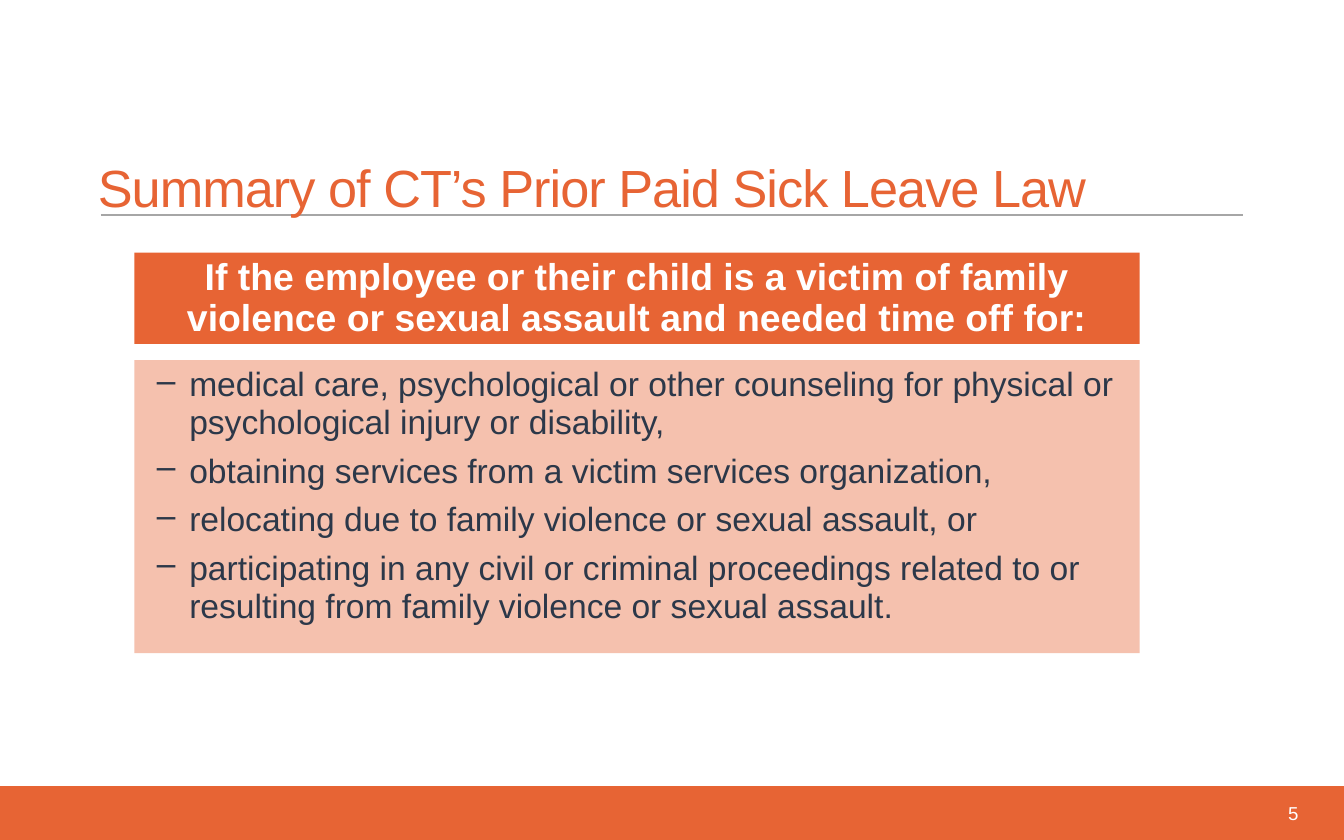
from dataclasses import dataclass

import pptx
import pptx.dml.color
import pptx.enum.shapes
import pptx.enum.text
import pptx.oxml.ns
import pptx.util
from lxml import etree
from pptx.util import Inches

ORANGE, PEACH, NAVY = "E76434", "F5C1AE", "2C3849"
WHITE, GREY = "FFFFFF", "A6A6A6"
ALIGN = pptx.enum.text.PP_ALIGN
ANCHOR = pptx.enum.text.MSO_ANCHOR

PURPOSES = [
    "medical care, psychological or other counseling for physical or "
    "psychological injury or disability,",
    "obtaining services from a victim services organization,",
    "relocating due to family violence or sexual assault, or",
    "participating in any civil or criminal proceedings related to or "
    "resulting from family violence or sexual assault.",
]


@dataclass
class Box:
    left: float
    top: float
    width: float
    height: float
    fill: str | None = None


@dataclass
class Style:
    size: float
    colour: str
    bold: bool = False
    align: ALIGN = ALIGN.LEFT
    anchor: ANCHOR = ANCHOR.TOP
    line_spacing: float = 1.0
    tracking: float = 0
    dashed: bool = False


def rgb(colour: str) -> pptx.dml.color.RGBColor:
    return pptx.dml.color.RGBColor.from_string(colour)


def add_box(slide, box: Box):
    """Add a filled rectangle, or a text box when there is no fill."""
    place = [Inches(v) for v in (box.left, box.top, box.width, box.height)]
    if box.fill is None:
        return slide.shapes.add_textbox(*place)
    shape = slide.shapes.add_shape(
        pptx.enum.shapes.MSO_SHAPE.RECTANGLE, *place)
    shape.shadow.inherit = False
    shape.fill.solid()
    shape.fill.fore_color.rgb = rgb(box.fill)
    shape.line.fill.background()
    return shape


def add_dash(paragraph) -> None:
    """Give a paragraph a hanging en-dash bullet."""
    properties = paragraph._p.get_or_add_pPr()
    properties.set("marL", str(Inches(0.31)))
    properties.set("indent", str(Inches(-0.24)))
    bullet = etree.SubElement(properties, pptx.oxml.ns.qn("a:buChar"))
    bullet.set("char", "–")


def write(shape, lines: list[str], style: Style) -> None:
    frame = shape.text_frame
    frame.word_wrap = True
    frame.vertical_anchor = style.anchor
    frame.text = "\n".join(lines)
    for index, paragraph in enumerate(frame.paragraphs):
        if style.dashed:
            add_dash(paragraph)
            paragraph.space_before = pptx.util.Pt(2 if index else 0)
            paragraph.space_after = pptx.util.Pt(4)
        paragraph.alignment = style.align
        paragraph.line_spacing = style.line_spacing
        for run in paragraph.runs:
            run.font.name = "Arial"
            run.font.size = pptx.util.Pt(style.size)
            run.font.bold = style.bold
            run.font.color.rgb = rgb(style.colour)
            if style.tracking:
                run.font._element.set("spc", str(round(style.tracking * 100)))


def add_rule(slide, left: float, right: float, y: float) -> None:
    rule = slide.shapes.add_connector(
        pptx.enum.shapes.MSO_CONNECTOR.STRAIGHT,
        Inches(left), Inches(y), Inches(right), Inches(y))
    rule.line.color.rgb = rgb(GREY)
    rule.line.width = pptx.util.Pt(1)
    etree.SubElement(rule._element.spPr, pptx.oxml.ns.qn("a:effectLst"))


def main() -> None:
    deck = pptx.Presentation()
    deck.slide_width, deck.slide_height = Inches(10), Inches(6.25)
    slide = deck.slides.add_slide(deck.slide_layouts[6])

    add_box(slide, Box(0, 5.85, 10, 0.4, ORANGE))
    add_rule(slide, 0.75, 9.25, 1.6)

    title = add_box(slide, Box(0.63, 1.14, 8.6, 0.6))
    title.text_frame.margin_top = Inches(0.09)
    write(title, ["Summary of CT’s Prior Paid Sick Leave Law"],
          Style(28, ORANGE, line_spacing=0.85, tracking=-0.5))

    page_number = add_box(slide, Box(9.09, 5.85, 0.67, 0.4))
    write(page_number, ["5"],
          Style(10, WHITE, align=ALIGN.RIGHT, anchor=ANCHOR.MIDDLE))

    purposes = add_box(slide, Box(1, 2.68, 7.48, 2.18, PEACH))
    write(purposes, PURPOSES,
          Style(18, NAVY, line_spacing=0.93, dashed=True))

    condition = add_box(slide, Box(1, 1.88, 7.48, 0.68, ORANGE))
    write(condition,
          ["If the employee or their child is a victim of family "
           "violence or sexual assault and needed time off for:"],
          Style(20, WHITE, bold=True, align=ALIGN.CENTER,
                anchor=ANCHOR.MIDDLE, line_spacing=0.93))

    deck.save("out.pptx")


if __name__ == "__main__":
    main()
